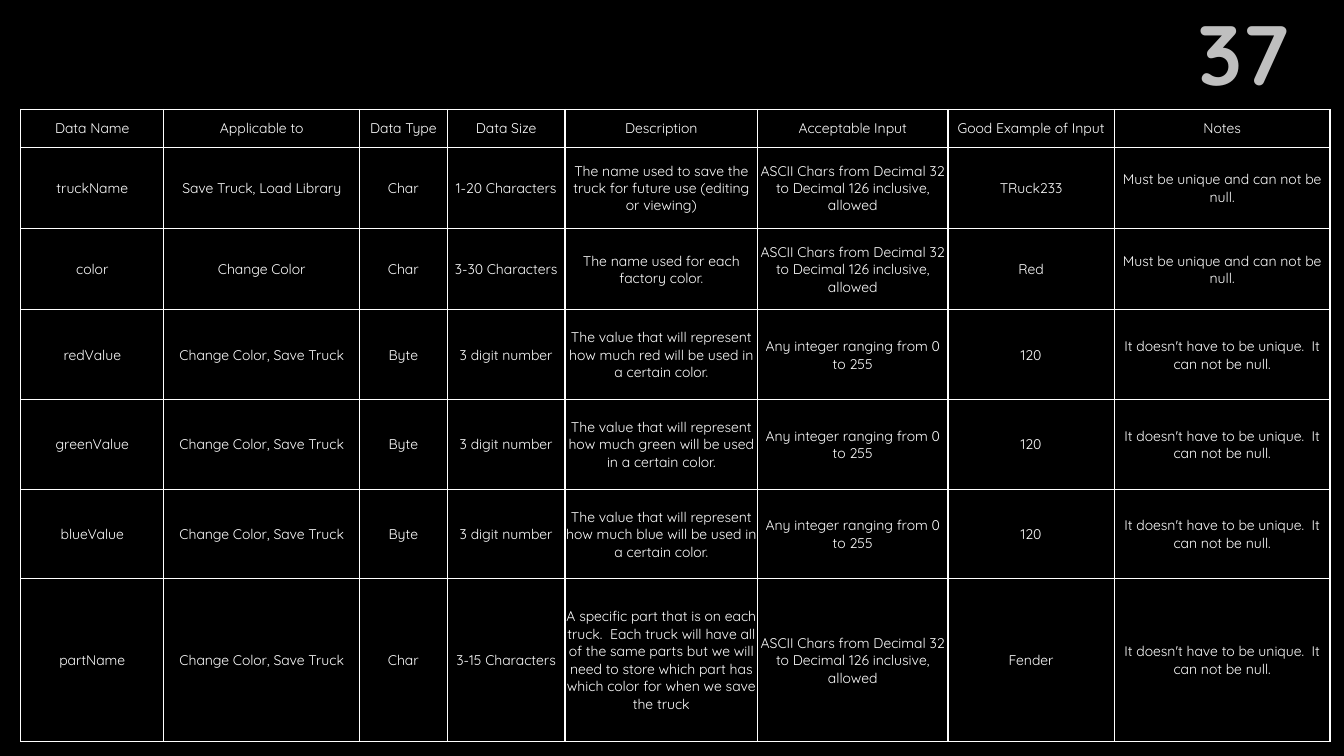
from lxml.etree import SubElement
from pptx import Presentation
from pptx.dml.color import RGBColor
from pptx.enum.text import MSO_ANCHOR as Anchor, PP_ALIGN as Align
from pptx.oxml.ns import qn
from pptx.util import Cm, Pt

BLACK = RGBColor(0x00, 0x00, 0x00)
WHITE = RGBColor(0xFF, 0xFF, 0xFF)
GREY = RGBColor(0xBF, 0xBF, 0xBF)

COLUMN_WIDTHS = [3.61, 4.93, 2.21, 2.97, 4.85, 4.8, 4.19, 5.44]
ROW_HEIGHTS = [0.95, 2.05, 2.05, 2.26, 2.26, 2.26, 4.09]

# Wording shared by several rows
ASCII_INPUT = "ASCII Chars from Decimal 32 to Decimal 126 inclusive, allowed"
UNIQUE = "Must be unique and can not be null."
NOT_UNIQUE = "It doesn't have to be unique.  It can not be null."
CHANGE_AND_SAVE = "Change Color, Save Truck"


def color_value_row(color):
    return [f"{color}Value", CHANGE_AND_SAVE, "Byte", "3 digit number",
            f"The value that will represent how much {color} will be used in a certain color.",
            "Any integer ranging from 0 to 255", "120", NOT_UNIQUE]


DATA_DICTIONARY = [
    ["Data Name", "Applicable to", "Data Type", "Data Size", "Description",
     "Acceptable Input", "Good Example of Input", "Notes"],
    ["truckName", "Save Truck, Load Library", "Char", "1-20 Characters",
     "The name used to save the truck for future use (editing or viewing)",
     ASCII_INPUT, "TRuck233", UNIQUE],
    ["color", "Change Color", "Char", "3-30 Characters",
     "The name used for each factory color.", ASCII_INPUT, "Red", UNIQUE],
    *[color_value_row(color) for color in ("red", "green", "blue")],
    ["partName", CHANGE_AND_SAVE, "Char", "3-15 Characters",
     "A specific part that is on each truck.  Each truck will have all of the same parts "
     "but we will need to store which part has which color for when we save the truck",
     ASCII_INPUT, "Fender", NOT_UNIQUE],
]


def apply(target, values):
    for name, value in values.items():
        setattr(target, name, value)


class SlideBuilder:
    font = "Quicksand"
    cell_format = {"vertical_anchor": Anchor.MIDDLE, "margin_left": Cm(0.02),
                   "margin_right": Cm(0.02), "margin_top": Cm(0.02), "margin_bottom": 0}
    table_format = {"first_row": False, "horz_banding": False}

    def __init__(self, slide):
        self.slide = slide
        fill = slide.background.fill
        fill.solid()
        fill.fore_color.rgb = BLACK

    def add_text(self, frame, text, size, color, align, bold=False):
        paragraph = frame.paragraphs[0]
        paragraph.alignment = align
        run = paragraph.add_run()
        run.text = text
        apply(run.font, {"name": self.font, "size": Pt(size), "bold": bold})
        run.font.color.rgb = color

    def page_number(self, text, left, top, width, height):
        box = self.slide.shapes.add_textbox(Cm(left), Cm(top), Cm(width), Cm(height))
        apply(box.text_frame, {"word_wrap": True, "vertical_anchor": Anchor.MIDDLE})
        self.add_text(box.text_frame, text, 60, GREY, Align.RIGHT, bold=True)

    def border(self, cell):
        properties = cell._tc.get_or_add_tcPr()
        for position, side in enumerate(("a:lnL", "a:lnR", "a:lnT", "a:lnB")):
            line = SubElement(properties, qn(side), w=str(Pt(1)))
            SubElement(SubElement(line, qn("a:solidFill")), qn("a:srgbClr"), val=str(WHITE))
            properties.insert(position, line)

    def table(self, rows, left, top, widths, heights):
        table = self.slide.shapes.add_table(
            len(rows), len(widths), Cm(left), Cm(top),
            Cm(sum(widths)), Cm(sum(heights))).table
        apply(table, self.table_format)
        for column, width in zip(table.columns, widths):
            column.width = Cm(width)
        for row, height, texts in zip(table.rows, heights, rows):
            row.height = Cm(height)
            for cell, text in zip(row.cells, texts):
                apply(cell, self.cell_format)
                cell.fill.background()
                self.border(cell)
                self.add_text(cell.text_frame, text, 10, WHITE, Align.CENTER)


def main():
    deck = Presentation()
    apply(deck, {"slide_width": Cm(33.87), "slide_height": Cm(19.05)})
    builder = SlideBuilder(deck.slides.add_slide(deck.slide_layouts[6]))

    # Page number
    builder.page_number("37", 29.57, 0.43, 3.2, 1.78)

    # Data dictionary
    builder.table(DATA_DICTIONARY, 0.52, 2.76, COLUMN_WIDTHS, ROW_HEIGHTS)

    deck.save("out.pptx")


if __name__ == "__main__":
    main()
